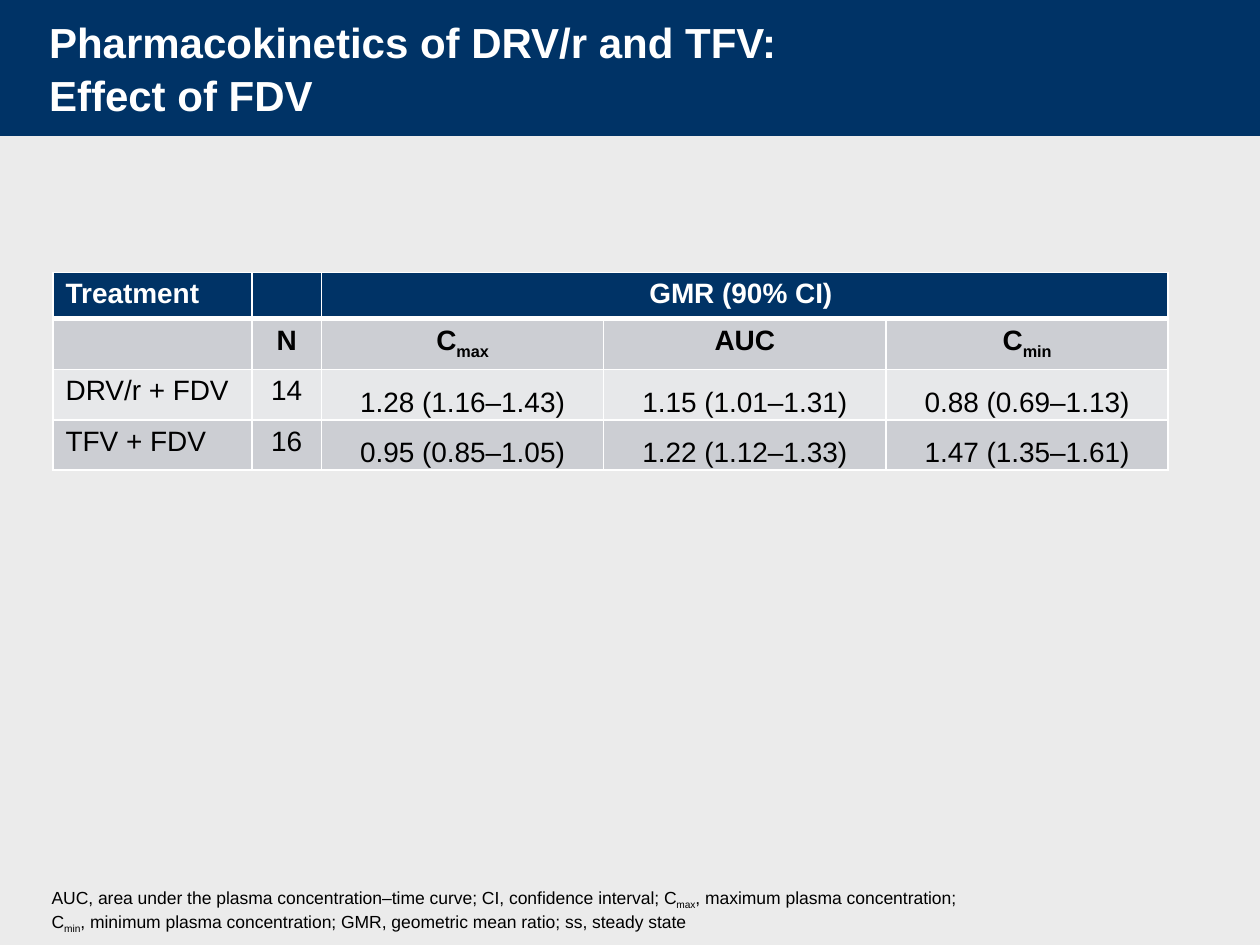
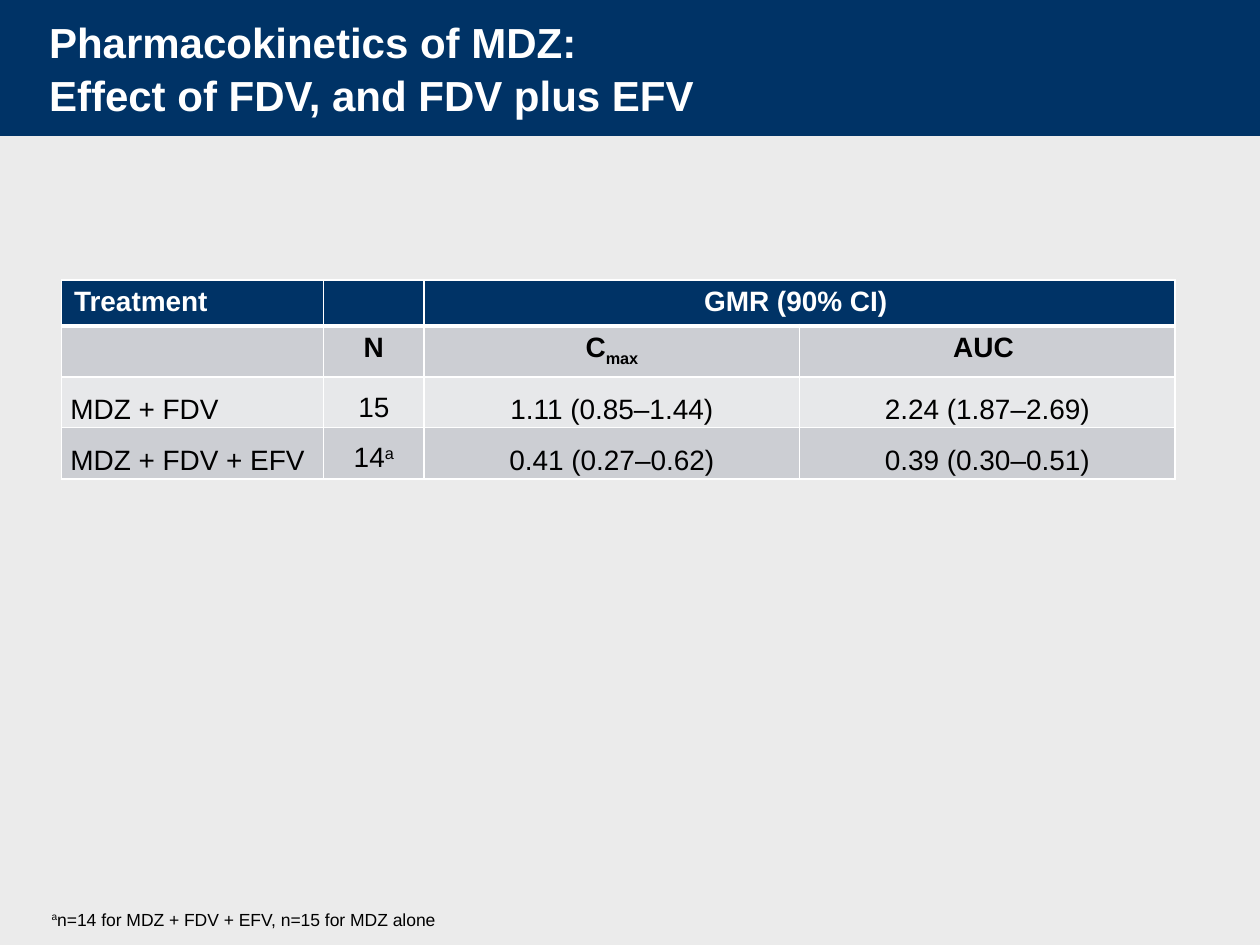
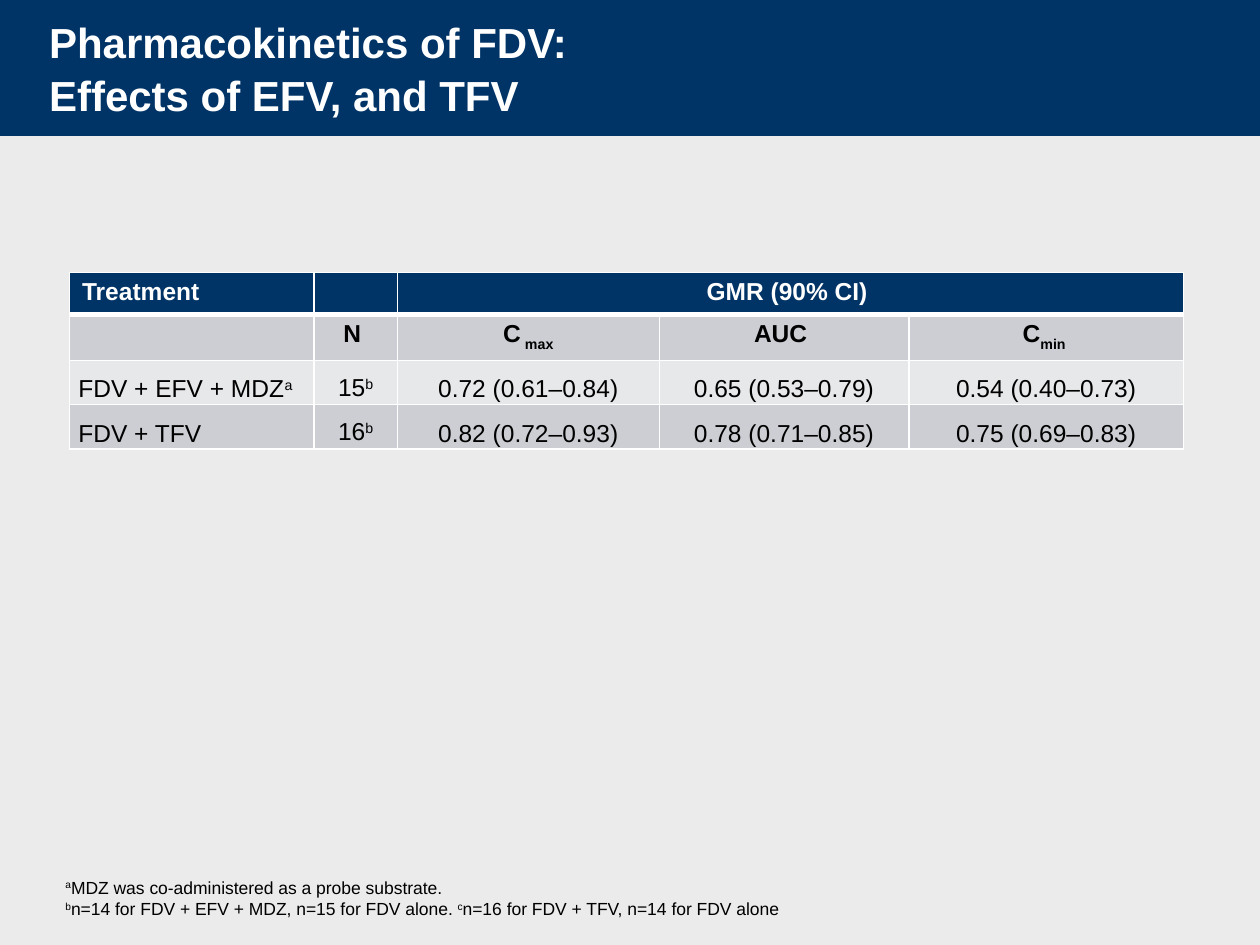
from lxml import etree
from pptx import Presentation
from pptx.dml.color import RGBColor
from pptx.enum.shapes import MSO_SHAPE
from pptx.enum.text import MSO_ANCHOR, PP_ALIGN
from pptx.oxml.ns import qn
from pptx.util import Cm, Pt

NAVY = RGBColor(0x00, 0x33, 0x66)
WHITE = RGBColor(0xFF, 0xFF, 0xFF)
BLACK = RGBColor(0x00, 0x00, 0x00)
PAPER = RGBColor(0xEB, 0xEB, 0xEB)
DARK_ROW = RGBColor(0xCC, 0xCE, 0xD3)
LIGHT_ROW = RGBColor(0xE7, 0xE8, 0xEA)
ROW_FILLS = [NAVY, DARK_ROW, LIGHT_ROW, DARK_ROW]
RECTANGLE = MSO_SHAPE.RECTANGLE
LEFT, CENTER = PP_ALIGN.LEFT, PP_ALIGN.CENTER
TOP, MIDDLE = MSO_ANCHOR.TOP, MSO_ANCHOR.MIDDLE
FONT = "Arial"
BASELINES = {"_": "-25000", "^": "30000"}


class PharmacokineticsDeck:
    """Holds the shared style and the slide being filled."""

    def __init__(self):
        self.deck = Presentation()
        self.deck.slide_width, self.deck.slide_height = Cm(25.4), Cm(19.05)
        background = self.deck.slide_master.background.fill
        background.solid()
        background.fore_color.rgb = PAPER
        self.page = None

    def start_page(self, title):
        """Add a slide with its band and title."""
        self.page = self.deck.slides.add_slide(self.deck.slide_layouts[6])
        band = self.page.shapes.add_shape(RECTANGLE, 0, 0, Cm(25.4), Cm(2.74))
        band.shadow.inherit = False
        band.fill.solid()
        band.fill.fore_color.rgb = NAVY
        band.line.fill.background()
        frame = self.text_box(0.99, 0.41, 18.82, 1.88)
        frame.margin_left = frame.margin_right = 0
        frame.margin_top = frame.margin_bottom = 0
        frame.vertical_anchor = MIDDLE
        para = frame.paragraphs[0]
        para.line_spacing = 1.05
        self.set_text(para, title, 24, WHITE, bold=True)

    def text_box(self, left, top, width, height):
        """Add a wrapping text box and return its frame."""
        box = self.page.shapes.add_textbox(Cm(left), Cm(top), Cm(width), Cm(height))
        box.text_frame.word_wrap = True
        return box.text_frame

    def set_text(self, para, text, size, color, bold=False, align=LEFT):
        """Fill in text whose parts between bars may start with _ (sub) or ^ (super)."""
        para.alignment = align
        para.font.name, para.font.size = FONT, Pt(size)
        para.font.bold, para.font.color.rgb = bold, color
        for number, line in enumerate(text.split("\n")):
            if number:
                para.add_line_break()
            for part in filter(None, line.split("|")):
                span = para.add_run()
                span.text = part.lstrip("_^")
                if part[0] in BASELINES:
                    span.font._element.set("baseline", BASELINES[part[0]])
        if not text:
            end = etree.SubElement(para._p, qn("a:endParaRPr"))
            end.set("sz", str(size * 100))

    def footnote(self, left, top, width, height, text):
        """Add the small print at the foot of the slide."""
        frame = self.text_box(left, top, width, height)
        self.set_text(frame.paragraphs[0], text, 10, BLACK)

    def border(self, cell, bottom):
        """Draw white lines around a cell."""
        properties = cell._tc.get_or_add_tcPr()
        widths = {"a:lnL": 1, "a:lnR": 1, "a:lnT": 1, "a:lnB": bottom}
        for position, (tag, width) in enumerate(widths.items()):
            line = etree.Element(qn(tag), w=str(Pt(width)))
            fill = etree.SubElement(line, qn("a:solidFill"))
            etree.SubElement(fill, qn("a:srgbClr"), val=str(WHITE))
            properties.insert(position, line)

    def table(self, left, top, widths, heights, labels, size=16, first_spaced=0):
        """Add a ratio table; data from column first_spaced on is widely spaced."""
        header = ["Treatment", "", "GMR (90% CI) "] + [""] * (len(widths) - 3)
        rows = [header] + labels
        table = self.page.shapes.add_table(
            len(rows), len(widths), Cm(left), Cm(top), Cm(sum(widths)), Cm(sum(heights))
        ).table
        for column, width in zip(table.columns, widths):
            column.width = Cm(width)
        for r, (texts, height) in enumerate(zip(rows, heights)):
            table.rows[r].height = Cm(height)
            for c, text in enumerate(texts):
                cell = table.cell(r, c)
                cell.fill.solid()
                cell.fill.fore_color.rgb = ROW_FILLS[r]
                self.border(cell, 1 if r else 3)
                para = cell.text_frame.paragraphs[0]
                self.set_text(para, text, size, BLACK if r else WHITE,
                              bold=r < 2, align=CENTER if c else LEFT)
                if r > 1 and c >= first_spaced:
                    para.line_spacing = 1.5
                    cell.margin_left = cell.margin_right = Cm(0.18)
                    cell.margin_top = cell.margin_bottom = 0
                    cell.vertical_anchor = TOP if c == 1 else MIDDLE
        table.cell(0, 2).merge(table.cell(0, len(widths) - 1))


def main():
    """Build the three slides."""
    slides = PharmacokineticsDeck()

    slides.start_page("Pharmacokinetics of DRV/r and TFV: \nEffect of FDV")
    slides.table(1.07, 5.49, [4.01, 1.4, 5.69, 5.69, 5.69], [0.84, 0.76, 0.79, 0.81], [
        ["", "N", "C|_max", "AUC", "C|_min"],
        ["DRV/r + FDV", "14", "1.28 (1.16–1.43)", "1.15 (1.01–1.31)", "0.88 (0.69–1.13)"],
        ["TFV + FDV", "16", "0.95 (0.85–1.05)", "1.22 (1.12–1.33)", "1.47 (1.35–1.61)"],
    ], first_spaced=2)
    slides.footnote(
        0.79, 17.75, 23.93, 1.12,
        "AUC, area under the plasma concentration–time curve; CI, confidence interval; "
        "C|_max|, maximum plasma concentration; \n"
        "C|_min|, minimum plasma concentration; GMR, geometric mean ratio; ss, steady state")

    slides.start_page("Pharmacokinetics of MDZ: \nEffect of FDV, and FDV plus EFV")
    slides.table(1.24, 5.64, [5.28, 2.03, 7.57, 7.57], [0.81, 0.86, 0.81, 1.04], [
        ["", "N", "C|_max", "AUC "],
        ["MDZ + FDV", "15", "1.11 (0.85–1.44)", "2.24 (1.87–2.69)"],
        ["MDZ + FDV + EFV", "14|^a", "0.41 (0.27–0.62)", "0.39 (0.30–0.51)"],
    ])
    slides.footnote(0.79, 18.19, 22.33, 0.69,
                    "^a|n=14 for MDZ + FDV + EFV, n=15 for MDZ alone")

    slides.start_page("Pharmacokinetics of FDV: \nEffects of EFV, and TFV")
    slides.table(1.4, 5.49, [4.93, 1.68, 5.28, 5.03, 5.54], [0.79, 0.74, 0.71, 0.71], [
        ["", "N ", "C|_ max", "AUC ", "C|_min "],
        ["FDV + EFV + MDZ|^a", "15|^b", "0.72 (0.61–0.84)", "0.65 (0.53–0.79)",
         "0.54 (0.40–0.73)"],
        ["FDV + TFV", "16|^b", "0.82 (0.72–0.93)", "0.78 (0.71–0.85)", "0.75 (0.69–0.83)"],
    ], size=14)
    slides.footnote(
        1.07, 17.55, 22.33, 1.12,
        "^a|MDZ was co-administered as a probe substrate. \n"
        "^b|n=14 for FDV + EFV + MDZ, n=15 for FDV alone. |"
        "^c|n=16 for FDV + TFV, n=14 for FDV alone")

    slides.deck.save("out.pptx")


if __name__ == "__main__":
    main()
